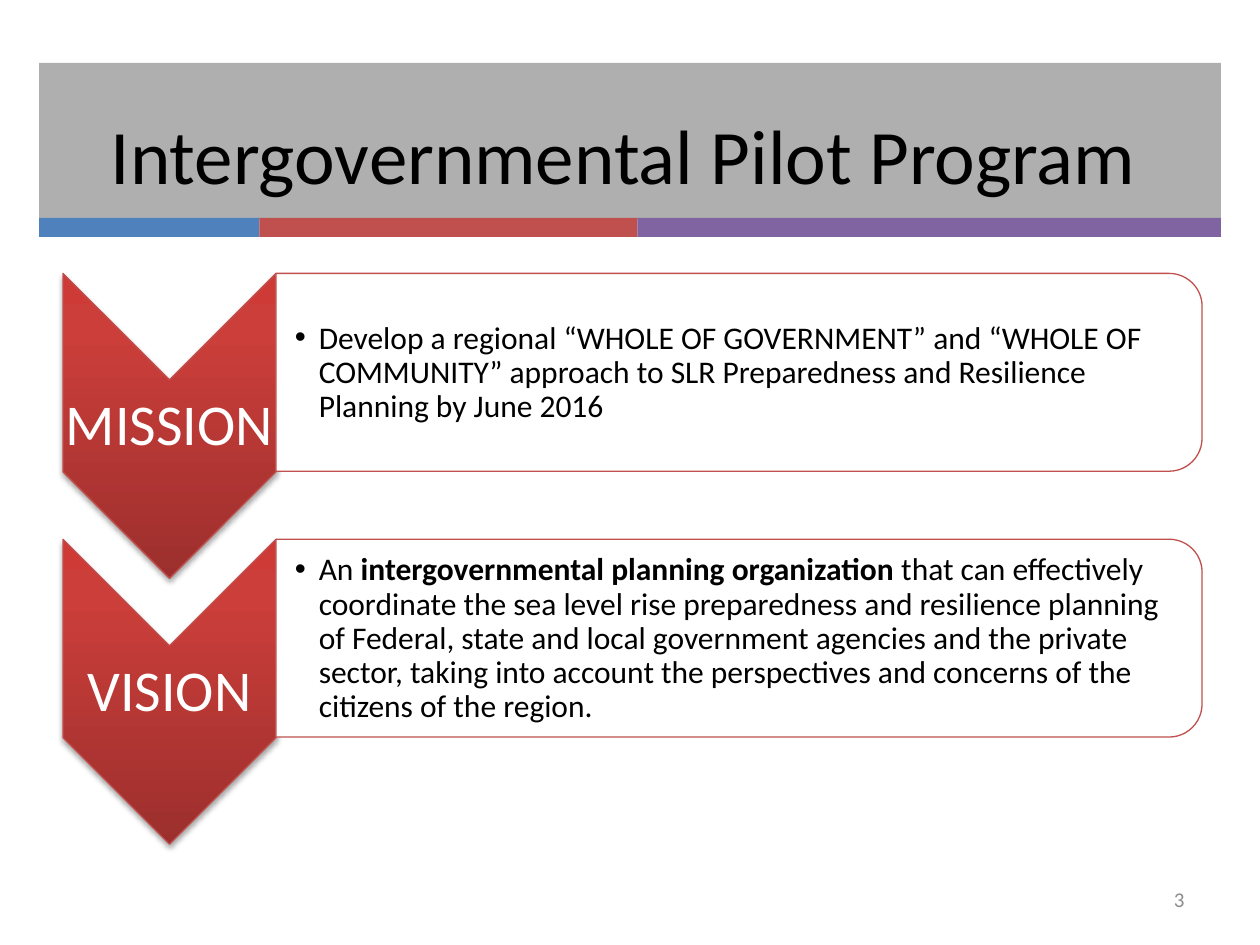
from dataclasses import dataclass

from lxml.etree import SubElement
from pptx import Presentation
from pptx.dml.color import RGBColor
from pptx.enum.shapes import MSO_SHAPE
from pptx.enum.text import MSO_ANCHOR, MSO_AUTO_SIZE, PP_ALIGN
from pptx.oxml import parse_xml
from pptx.oxml.ns import nsdecls, qn
from pptx.util import Emu, Pt

PX = 9144
FONT = "Calibri"
COLORS = {
    "header": "AFAFAF", "blue": "4F81BD", "red": "C0504D", "purple": "8064A2",
    "dark_red": "9C2F2D", "mid_red": "CB3E3A", "bright_red": "CE3B37",
    "white": "FFFFFF", "black": "000000", "number": "8C8C8C",
}


@dataclass(frozen=True)
class Box:
    x: int
    y: int
    w: int
    h: int


@dataclass(frozen=True)
class Band:
    box: Box
    color: str


@dataclass(frozen=True)
class Run:
    text: str
    bold: bool = False


@dataclass(frozen=True)
class Row:
    label: str
    runs: tuple[Run, ...]


BANDS = (
    Band(Box(31, 50, 938, 124), "header"),
    Band(Box(31, 173, 175, 15), "blue"),
    Band(Box(206, 173, 300, 15), "red"),
    Band(Box(506, 173, 463, 15), "purple"),
)
ROWS = (
    Row("MISSION", (
        Run("Develop a regional “WHOLE OF GOVERNMENT” and “WHOLE OF COMMUNITY” "
            "approach to SLR Preparedness and Resilience Planning by June 2016"),
    )),
    Row("VISION", (
        Run("An "),
        Run("intergovernmental planning organization ", True),
        Run("that can effectively coordinate the sea level rise preparedness and "
            "resilience planning of Federal, state and local government agencies and "
            "the private sector, taking into account the perspectives and concerns of "
            "the citizens of the region."),
    )),
)
ROW_TOP = 217
ROW_STEP = 211


def px(n: float) -> Emu:
    return Emu(round(n * PX))


def rgb(name: str) -> RGBColor:
    return RGBColor.from_string(COLORS[name])


def place(sp, box: Box) -> None:
    sp.left, sp.top, sp.width, sp.height = px(box.x), px(box.y), px(box.w), px(box.h)


def add_shape(s, kind: MSO_SHAPE, box: Box, color: str):
    sp = s.shapes.add_shape(kind, px(box.x), px(box.y), px(box.w), px(box.h))
    sp.shadow.inherit = False
    sp.fill.solid()
    sp.fill.fore_color.rgb = rgb(color)
    sp.line.fill.background()
    return sp


def add_turned(s, kind: MSO_SHAPE, box: Box, color: str):
    sp = add_shape(s, kind, box, color)
    sp.left, sp.top = px(box.x + (box.w - box.h) / 2), px(box.y + (box.h - box.w) / 2)
    sp.width, sp.height = px(box.h), px(box.w)
    sp.rotation = 90
    sp.line.color.rgb = rgb("red")
    sp.line.width = Pt(0.75)
    return sp


def shade(sp) -> None:
    pr = sp._element.spPr
    stops = "".join(
        f'<a:gs pos="{pos}"><a:srgbClr val="{COLORS[name]}"/></a:gs>'
        for pos, name in ((0, "dark_red"), (80000, "mid_red"), (100000, "bright_red"))
    )
    pr.replace(pr.find(qn("a:solidFill")), parse_xml(
        f'<a:gradFill {nsdecls("a")} rotWithShape="0"><a:gsLst>{stops}</a:gsLst>'
        '<a:lin ang="16200000" scaled="0"/></a:gradFill>'))
    pr.replace(pr.find(qn("a:effectLst")), parse_xml(
        f'<a:effectLst {nsdecls("a")}><a:outerShdw blurRad="40000" dist="23000" '
        'dir="5400000" rotWithShape="0"><a:srgbClr val="000000">'
        '<a:alpha val="35000"/></a:srgbClr></a:outerShdw></a:effectLst>'))


def set_frame(tf, margins: tuple[int, int, int, int]) -> None:
    tf.word_wrap = True
    tf.auto_size = MSO_AUTO_SIZE.NONE
    tf.vertical_anchor = MSO_ANCHOR.MIDDLE
    tf.margin_left, tf.margin_top, tf.margin_right, tf.margin_bottom = map(px, margins)


def style(r, size: int, color: str, bold: bool = False) -> None:
    r.font.name = FONT
    r.font.size = Pt(size)
    r.font.bold = bold
    r.font.color.rgb = rgb(color)


def add_text(s, box: Box, margins: tuple[int, int, int, int], runs: tuple[Run, ...],
             size: int, color: str, align: PP_ALIGN):
    tf = s.shapes.add_textbox(px(box.x), px(box.y), px(box.w), px(box.h)).text_frame
    set_frame(tf, margins)
    p = tf.paragraphs[0]
    p.alignment = align
    p.line_spacing = 0.9
    for run in runs:
        r = p.add_run()
        r.text = run.text
        style(r, size, color, run.bold)
    return p


def add_bullet(p) -> None:
    pr = p._p.get_or_add_pPr()
    pr.set("marL", str(px(19)))
    pr.set("indent", str(px(-19)))
    SubElement(pr, qn("a:buFont"), typeface="Arial")
    SubElement(pr, qn("a:buChar"), char="•")


def add_row(s, row: Row, top: int) -> None:
    shade(add_turned(s, MSO_SHAPE.CHEVRON, Box(50, top, 169, 242), "bright_red"))
    add_text(s, Box(50, top + 85, 169, 73), (2, 2, 2, 2), (Run(row.label),),
             33, "white", PP_ALIGN.CENTER)
    add_turned(s, MSO_SHAPE.ROUND_2_SAME_RECTANGLE, Box(219, top, 735, 157), "white")
    add_bullet(add_text(s, Box(220, top + 8, 727, 142), (14, 1, 1, 1), row.runs,
                        18, "black", PP_ALIGN.LEFT))


def set_title(s, text: str) -> None:
    sp = s.shapes.title
    s.shapes._spTree.append(sp._element)
    place(sp, Box(30, 69, 940, 106))
    tf = sp.text_frame
    set_frame(tf, (10, 5, 20, 5))
    tf.text = text
    p = tf.paragraphs[0]
    p.alignment = PP_ALIGN.CENTER
    style(p.runs[0], 44, "black")


def main() -> None:
    prs = Presentation()
    prs.slide_width, prs.slide_height = px(1000), px(750)
    s = prs.slides.add_slide(prs.slide_layouts[5])
    for band in BANDS:
        add_shape(s, MSO_SHAPE.RECTANGLE, band.box, band.color)
    for i, row in enumerate(ROWS):
        add_row(s, row, ROW_TOP + i * ROW_STEP)
    set_title(s, "Intergovernmental Pilot Program")
    add_text(s, Box(717, 695, 233, 40), (10, 5, 10, 5), (Run("3"),),
             12, "number", PP_ALIGN.RIGHT)
    prs.save("out.pptx")


if __name__ == "__main__":
    main()
